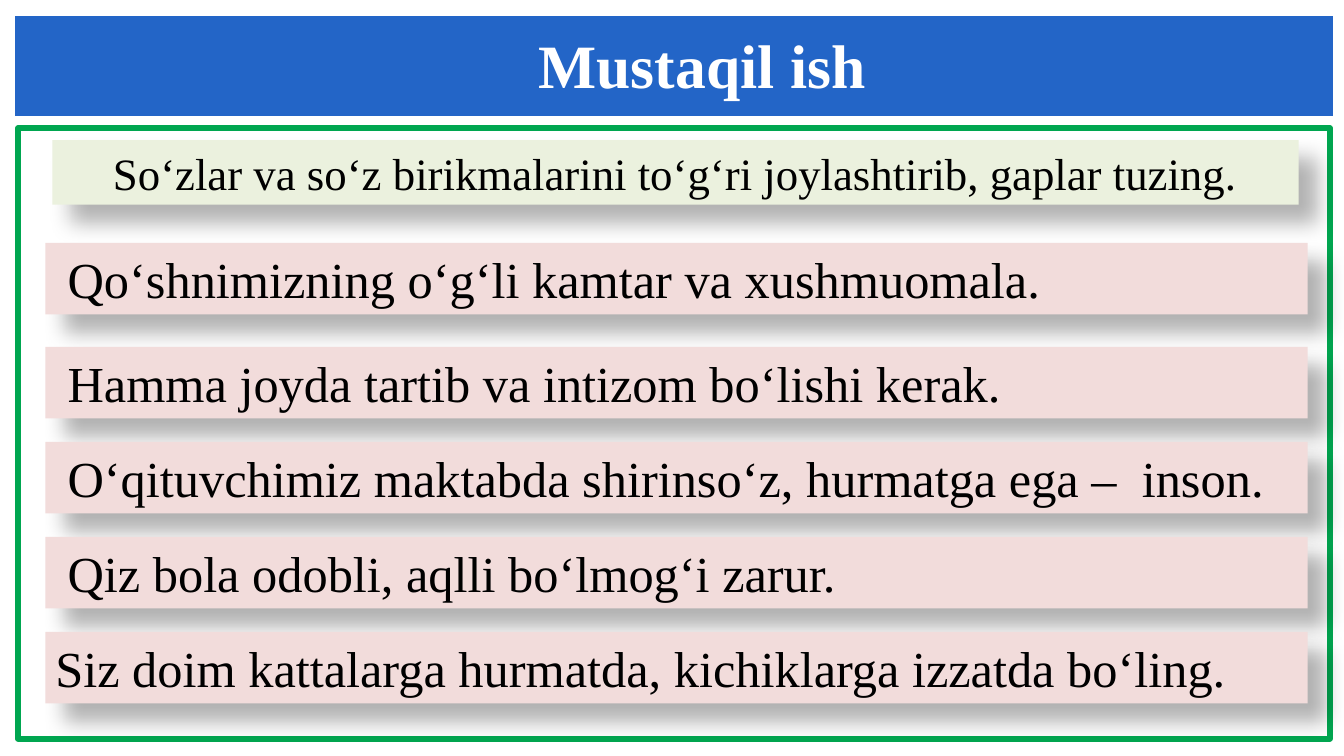
from lxml import etree
from pptx import Presentation
from pptx.dml.color import RGBColor
from pptx.enum.shapes import MSO_SHAPE as SHAPE
from pptx.enum.text import MSO_ANCHOR as ANCHOR, PP_ALIGN as ALIGN
from pptx.oxml.ns import qn
from pptx.util import Inches, Pt

# Content
TITLE = "Mustaqil ish"
TASK = "So‘zlar va so‘z birikmalarini to‘g‘ri joylashtirib, gaplar tuzing."
# (sentence, left inset in inches)
SENTENCES = [
    ("Qo‘shnimizning o‘g‘li kamtar va xushmuomala.", 0.22),
    ("Hamma joyda tartib va intizom bo‘lishi kerak.", 0.22),
    ("O‘qituvchimiz maktabda shirinso‘z, hurmatga ega –  inson.", 0.22),
    ("Qiz bola odobli, aqlli bo‘lmog‘i zarur.", 0.22),
    ("Siz doim kattalarga hurmatda, kichiklarga izzatda bo‘ling.", 0.1),
]

FONT = "Times New Roman"
BLUE = RGBColor(0x23, 0x65, 0xC7)
GREEN = RGBColor(0x00, 0xA6, 0x50)
PALE_GREEN = RGBColor(0xEB, 0xF1, 0xDE)
PINK = RGBColor(0xF2, 0xDC, 0xDB)
BLACK = RGBColor(0, 0, 0)
WHITE = RGBColor(255, 255, 255)

# Sentence bars: the first stands apart, the rest are evenly spaced
FIRST_TOP, SECOND_TOP, STEP = 2.41, 3.44, 0.943
BAR_TOPS = [FIRST_TOP] + [SECOND_TOP + STEP * i for i in range(len(SENTENCES) - 1)]


def write(sp, text, size, color, align, left=0.1, bottom=0.05, bold=False):
    tf = sp.text_frame
    tf.word_wrap = True
    tf.vertical_anchor = ANCHOR.MIDDLE
    tf.margin_left, tf.margin_right = Inches(left), Inches(0.1)
    tf.margin_top, tf.margin_bottom = Inches(0.05), Inches(bottom)
    p = tf.paragraphs[0]
    p.text = text
    p.alignment = align
    p.font.name, p.font.size, p.font.bold = FONT, Pt(size), bold
    p.font.color.rgb = color


def add_shadow(sp):
    sp.shadow.inherit = False
    effects = sp._element.spPr.find(qn("a:effectLst"))
    shadow = etree.SubElement(effects, qn("a:outerShdw"), blurRad=str(Pt(15)),
                              dist=str(Pt(18)), dir="2700000", algn="tl", rotWithShape="0")
    color = etree.SubElement(shadow, qn("a:srgbClr"), val=str(BLACK))
    etree.SubElement(color, qn("a:alpha"), val="30000")


def add_bar(slide, left, top, width, height, fill):
    sp = slide.shapes.add_shape(SHAPE.RECTANGLE, Inches(left), Inches(top),
                                Inches(width), Inches(height))
    sp.fill.solid()
    sp.fill.fore_color.rgb = fill
    sp.line.fill.background()
    add_shadow(sp)
    return sp


prs = Presentation()
prs.slide_width, prs.slide_height = Inches(13.33), Inches(7.5)
slide = prs.slides.add_slide(prs.slide_layouts[5])

# Title banner
title = slide.shapes.title
title.left, title.top = Inches(0.15), Inches(0.16)
title.width, title.height = Inches(13.07), Inches(0.99)
title.fill.solid()
title.fill.fore_color.rgb = BLUE
write(title, TITLE, 44, WHITE, ALIGN.CENTER, left=0.66, bottom=0.1, bold=True)

# Green frame
frame = slide.shapes.add_shape(SHAPE.RECTANGLE, Inches(0.18), Inches(1.27),
                               Inches(13.01), Inches(6.06))
frame.fill.background()
frame.line.color.rgb = GREEN
frame.line.width = Pt(4)
frame.shadow.inherit = False

# Task and sentences
task = add_bar(slide, 0.52, 1.39, 12.36, 0.64, PALE_GREEN)
write(task, TASK, 32, BLACK, ALIGN.CENTER)
for (sentence, inset), top in zip(SENTENCES, BAR_TOPS):
    bar = add_bar(slide, 0.45, top, 12.52, 0.71, PINK)
    write(bar, sentence, 36, BLACK, ALIGN.LEFT, left=inset)

prs.save("out.pptx")
